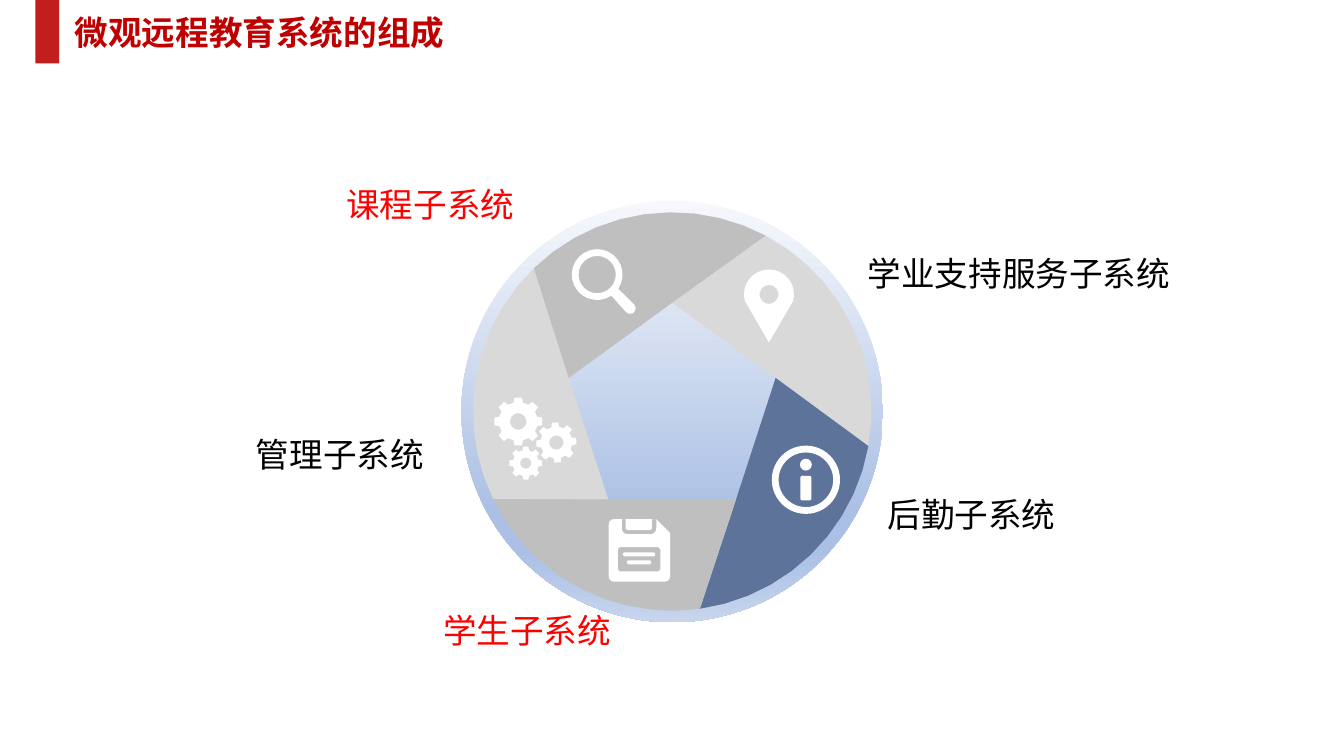
"""Build the slide on the parts of a micro distance-education system."""
from copy import deepcopy
from dataclasses import dataclass
from math import cos, radians, sin

from lxml import etree
from pptx import Presentation
from pptx.dml.color import RGBColor
from pptx.enum.shapes import MSO_SHAPE as Preset
from pptx.enum.text import MSO_ANCHOR as Anchor, MSO_AUTO_SIZE as AutoSize, PP_ALIGN as Align
from pptx.oxml.ns import qn
from pptx.util import Cm, Pt

Point = tuple[float, float]
Outline = list[Point]

FONT = "Noto Sans CJK SC"
BAR_RED = RGBColor(0xC1, 0x1E, 0x1E)
TITLE_RED = RGBColor(0xC0, 0x00, 0x00)
RED = RGBColor(0xFF, 0x00, 0x00)
BLACK = RGBColor(0x00, 0x00, 0x00)
WHITE = RGBColor(0xFF, 0xFF, 0xFF)
LIGHT_GREY = RGBColor(0xD9, 0xD9, 0xD9)
MID_GREY = RGBColor(0xBF, 0xBF, 0xBF)
SLATE = RGBColor(0x5D, 0x73, 0x9A)
PALE_BLUE = RGBColor(0xF6, 0xF8, 0xFC)
SOFT_BLUE = RGBColor(0xAB, 0xC0, 0xE4)
EDGE_BLUE = RGBColor(0xC7, 0xD5, 0xED)

CENTRE = (16.94, 10.37)
DISC_SIZE = 10.62
RIM_RADIUS = 5.02
PENTAGON_RADIUS = 2.74
RIM_START = 28
SECTOR = 72
SECTOR_COLOURS = (LIGHT_GREY, SLATE, MID_GREY, LIGHT_GREY, MID_GREY)
DISC_STOPS = ((0, PALE_BLUE), (0.74, SOFT_BLUE), (0.83, SOFT_BLUE), (1, EDGE_BLUE))


@dataclass
class Label:
    text: str
    left: float
    top: float
    width: float
    colour: RGBColor
    wrap: bool = False
    bold: bool = False


@dataclass
class Gear:
    centre: Point
    tip: float
    root: float
    hole: float
    tilt: float = 0


TITLE = Label("微观远程教育系统的组成", 1.63, 0.18, 9.9, TITLE_RED, bold=True)
LABELS = (
    Label("课程子系统", 8.48, 4.52, 4.78, RED),
    Label("学业支持服务子系统", 21.62, 6.25, 8.2, BLACK),
    Label("管理子系统", 6.2, 10.8, 5.03, BLACK),
    Label("后勤子系统", 22.12, 12.32, 4.78, BLACK),
    Label("学生子系统", 10.92, 15.24, 6.76, RED, wrap=True),
)
GEARS = (
    Gear((13.06, 10.62), 0.61, 0.49, 0.21),
    Gear((14.02, 11.15), 0.51, 0.4, 0.18, -4),
    Gear((13.25, 11.67), 0.42, 0.33, 0.14),
)


def polar(centre: Point, radius: float, angle: float) -> Point:
    """Return the point at a clockwise angle from the top."""
    return (centre[0] + radius * sin(radians(angle)), centre[1] - radius * cos(radians(angle)))


def arc(centre: Point, radius: float, start: float, end: float, steps: int) -> Outline:
    """Return points along a circular arc."""
    return [polar(centre, radius, start + (end - start) * step / steps) for step in range(steps + 1)]


def ring(centre: Point, radius: float, steps: int = 14) -> Outline:
    """Return a full circle."""
    return arc(centre, radius, 0, 360, steps)[:-1]


def box_outline(left: float, top: float, right: float, bottom: float, corner: float) -> Outline:
    """Return a box with cut corners."""
    return [(left + corner, top), (right - corner, top), (right, top + corner), (right, bottom - corner),
            (right - corner, bottom), (left + corner, bottom), (left, bottom - corner), (left, top + corner)]


def sector(index: int) -> Outline:
    """Return one sector between the pentagon and the rim."""
    turn = index * SECTOR
    start = RIM_START + turn
    return [polar(CENTRE, PENTAGON_RADIUS, turn), *arc(CENTRE, RIM_RADIUS, start, start + SECTOR, 10),
            polar(CENTRE, PENTAGON_RADIUS, turn + SECTOR)]


def toothed(gear: Gear) -> Outline:
    """Return the outer edge of an eight-tooth gear."""
    profile = ((gear.root, -14), (gear.tip, -9), (gear.tip, 9), (gear.root, 14))
    return [polar(gear.centre, radius, gear.tilt + tooth * 45 + offset)
            for tooth in range(8) for radius, offset in profile]


def magnifier() -> list[Outline]:
    """Return the lens with its handle."""
    lens = (15.05, 6.92)
    edge = arc(lens, 0.64, 146, 484, 24) + arc((15.88, 7.77), 0.14, 45, 225, 5)
    return [edge, ring(lens, 0.47, 24)]


def pin() -> list[Outline]:
    """Return the map pin."""
    head = (19.38, 7.42)
    return [[*arc(head, 0.63, -105, 105, 16), (19.38, 8.63)], ring(head, 0.24)]


def floppy() -> list[Outline]:
    """Return the floppy disk."""
    body = [*arc((15.48, 13.22), 0.14, 270, 360, 3), (16.54, 13.08), (16.89, 13.43),
            *arc((16.75, 14.52), 0.14, 90, 180, 3), *arc((15.48, 14.52), 0.14, 180, 270, 3)]
    notch = [(15.67, 13.08), (16.54, 13.08), *arc((16.4, 13.32), 0.14, 90, 180, 3),
             *arc((15.81, 13.32), 0.14, 180, 270, 3)]
    shutter = [(15.77, 13.08), (16.43, 13.08), (16.43, 13.32), (16.39, 13.36), (15.81, 13.36), (15.77, 13.32)]
    return [body, notch, shutter,
            box_outline(15.57, 13.79, 16.64, 14.4, 0.05),
            box_outline(15.7, 13.92, 16.51, 14.02, 0.03),
            box_outline(15.8, 14.12, 16.41, 14.22, 0.03)]


def plain(shape, colour: RGBColor) -> None:
    """Give a shape a flat fill with no line or shadow."""
    shape.shadow.inherit = False
    shape.fill.solid()
    shape.fill.fore_color.rgb = colour
    shape.line.fill.background()


def draw_outlines(shapes, outlines: list[Outline], colour: RGBColor) -> None:
    """Draw closed outlines as one shape, inner ones being holes."""
    first, *others = [[(Cm(x), Cm(y)) for x, y in outline] for outline in outlines]
    builder = shapes.build_freeform(*first[0], scale=1.0)
    builder.add_line_segments(first[1:], close=True)
    for outline in others:
        builder.move_to(*outline[0])
        builder.add_line_segments(outline[1:], close=True)
    plain(builder.convert_to_shape(), colour)


def draw_preset(shapes, kind: Preset, centre: Point, width: float, height: float, colour: RGBColor):
    """Draw a filled preset shape around its centre."""
    shape = shapes.add_shape(kind, Cm(centre[0] - width / 2), Cm(centre[1] - height / 2),
                             Cm(width), Cm(height))
    plain(shape, colour)
    return shape


def shade_disc(disc) -> None:
    """Fill the disc with its vertical gradient."""
    disc.fill.gradient()
    disc.fill.gradient_angle = 270
    stop_list = disc.element.spPr.find(".//" + qn("a:gsLst"))
    while len(stop_list) < len(DISC_STOPS):
        stop_list.append(deepcopy(stop_list[0]))
    for stop, (position, colour) in zip(disc.fill.gradient_stops, DISC_STOPS):
        stop.position = position
        stop.color.rgb = colour


def write_label(box, label: Label) -> None:
    """Place a text box or placeholder and format its text."""
    box.left, box.top, box.width, box.height = map(Cm, (label.left, label.top, label.width, 1.28))
    frame = box.text_frame
    layout = {"word_wrap": label.wrap, "auto_size": AutoSize.SHAPE_TO_FIT_TEXT, "vertical_anchor": Anchor.TOP}
    for name, value in layout.items():
        setattr(frame, name, value)
    para = frame.paragraphs[0]
    para.alignment = Align.LEFT
    span = para.add_run()
    span.text = label.text
    for name, value in {"name": FONT, "size": Pt(24), "bold": label.bold}.items():
        setattr(span.font, name, value)
    span.font.color.rgb = label.colour
    etree.SubElement(span._r.get_or_add_rPr(), qn("a:ea"), typeface=FONT)


def main() -> None:
    """Build and save the deck."""
    deck = Presentation()
    deck.slide_width, deck.slide_height = Cm(33.87), Cm(19.05)
    page = deck.slides.add_slide(deck.slide_layouts[5])
    draw_preset(page.shapes, Preset.RECTANGLE, (1.19, 0.8), 0.6, 1.6, BAR_RED)
    write_label(page.shapes.title, TITLE)

    wheel = page.shapes.add_group_shape().shapes
    shade_disc(draw_preset(wheel, Preset.OVAL, CENTRE, DISC_SIZE, DISC_SIZE, SOFT_BLUE))
    for index, colour in enumerate(SECTOR_COLOURS):
        draw_outlines(wheel, [sector(index)], colour)
    gears = [edge for gear in GEARS for edge in (toothed(gear), ring(gear.centre, gear.hole))]
    for icon in (magnifier(), gears, pin(), floppy()):
        draw_outlines(wheel, icon, WHITE)
    info_ring = draw_preset(wheel, Preset.DONUT, (20.31, 12.09), 1.72, 1.72, WHITE)
    info_ring.adjustments[0] = 0.1
    draw_preset(wheel, Preset.ROUNDED_RECTANGLE, (20.31, 12.3), 0.28, 0.62, WHITE)
    draw_preset(wheel, Preset.OVAL, (20.31, 11.71), 0.3, 0.3, WHITE)

    for label in LABELS:
        write_label(page.shapes.add_textbox(0, 0, 0, 0), label)
    deck.save("out.pptx")


if __name__ == "__main__":
    main()
